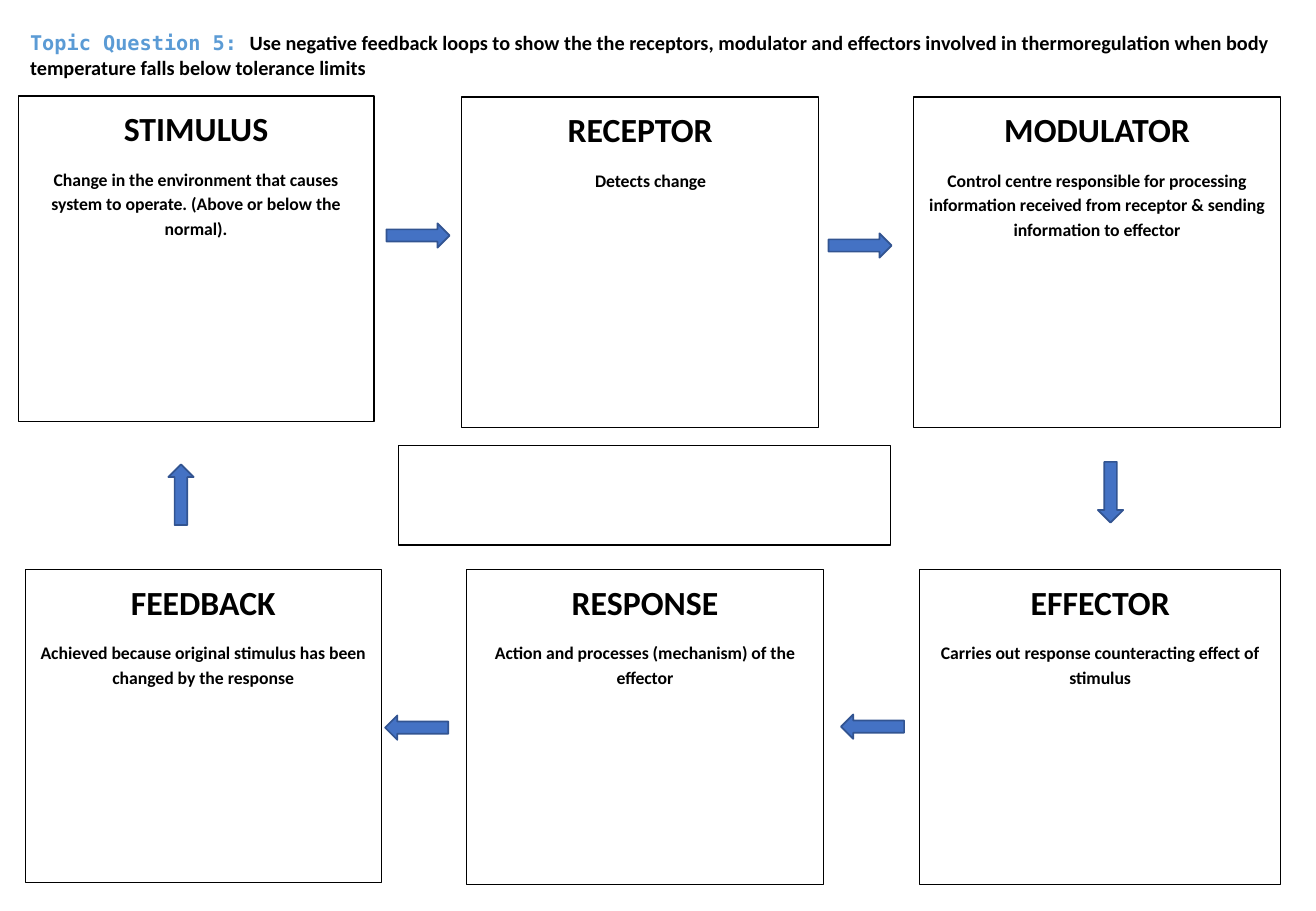
from pptx import Presentation
from pptx.dml.color import RGBColor
from pptx.enum.shapes import MSO_SHAPE
from pptx.enum.text import MSO_ANCHOR, PP_ALIGN
from pptx.util import Cm, Pt

RECT, ARROW = MSO_SHAPE.RECTANGLE, MSO_SHAPE.RIGHT_ARROW
TOP, MIDDLE = MSO_ANCHOR.TOP, MSO_ANCHOR.MIDDLE
LEFT, CENTER = PP_ALIGN.LEFT, PP_ALIGN.CENTER

# Stage boxes: heading, description, position and size in cm, text indent
STAGES = [
    ("STIMULUS", "Change in the environment that causes system to operate. "
     "(Above or below the normal).", (0.38, 2.01, 7.44, 6.81), 0),
    ("RECEPTOR", "Detects change", (9.65, 2.03, 7.47, 6.91), 2.54),
    ("MODULATOR", "Control centre responsible for processing information received "
     "from receptor & sending information to effector", (19.1, 2.03, 7.67, 6.91), 0),
    ("EFFECTOR", "Carries out response counteracting effect of stimulus",
     (19.23, 11.91, 7.54, 6.58), 0),
    ("RESPONSE", "Action and processes (mechanism) of the effector",
     (9.75, 11.91, 7.47, 6.58), 0),
    ("FEEDBACK", "Achieved because original stimulus has been changed by the response",
     (0.53, 11.91, 7.44, 6.55), 0),
]
CENTRE_BOX = (8.33, 9.32, 10.29, 2.08)

# Arrows round the loop: position and size in cm, rotation
ARROWS = [
    ((8.08, 4.67, 1.32, 0.51), 0),
    ((17.32, 4.88, 1.32, 0.51), 0),
    ((22.58, 10.03, 1.27, 0.53), 90),
    ((17.58, 14.94, 1.32, 0.51), 180),
    ((8.05, 14.96, 1.32, 0.51), 180),
    ((3.15, 10.08, 1.27, 0.53), 270),
]


def rgb(color):
    return RGBColor.from_string(color)


def add_run(p, text, size=12, font="Calibri", color="000000", bold=True):
    r = p.add_run()
    r.text = text
    r.font.size, r.font.name, r.font.bold = Pt(size), font, bold
    r.font.color.rgb = rgb(color)


def add_shape(s, kind, box, fill="FFFFFF", line="000000", width=0.75, rotation=0):
    sp = s.shapes.add_shape(kind, *map(Cm, box))
    sp.shadow.inherit = False
    sp.fill.solid()
    sp.fill.fore_color.rgb = rgb(fill)
    sp.line.color.rgb = rgb(line)
    sp.line.width = Pt(width)
    sp.rotation = rotation
    return sp


def add_stage(s, heading, description, box, indent):
    tf = add_shape(s, RECT, box).text_frame
    tf.word_wrap = True
    tf.vertical_anchor = TOP
    head, body = tf.paragraphs[0], tf.add_paragraph()
    for p in (head, body):
        p.alignment = CENTER
        p.line_spacing = 1.15
        p.space_after = Pt(10)
    if indent:
        body.alignment = LEFT
        body._p.get_or_add_pPr().set("marL", str(Cm(indent)))
    add_run(head, heading, size=20)
    add_run(body, description, size=10.5)


def add_title(s):
    tf = s.shapes.add_textbox(Cm(0.38), Cm(0.2), Cm(26.75), Cm(1.9)).text_frame
    tf.word_wrap = True
    tf.vertical_anchor = MIDDLE
    p = tf.paragraphs[0]
    add_run(p, "Topic Question 5: ", font="DejaVu Sans Mono", color="5B9BD5")
    add_run(p, "Use negative feedback loops to show the the receptors, modulator and "
            "effectors involved in thermoregulation when body temperature falls "
            "below tolerance limits")


def main():
    prs = Presentation()
    prs.slide_width, prs.slide_height = Cm(27.51), Cm(19.05)
    s = prs.slides.add_slide(prs.slide_layouts[6])

    add_title(s)
    # Boxes of the loop and the empty answer box in the centre
    for stage in STAGES:
        add_stage(s, *stage)
    add_shape(s, RECT, CENTRE_BOX)
    # Arrows between the boxes
    for box, rotation in ARROWS:
        add_shape(s, ARROW, box, fill="4472C4", line="325491", width=1,
                  rotation=rotation)

    prs.save("out.pptx")


if __name__ == "__main__":
    main()
